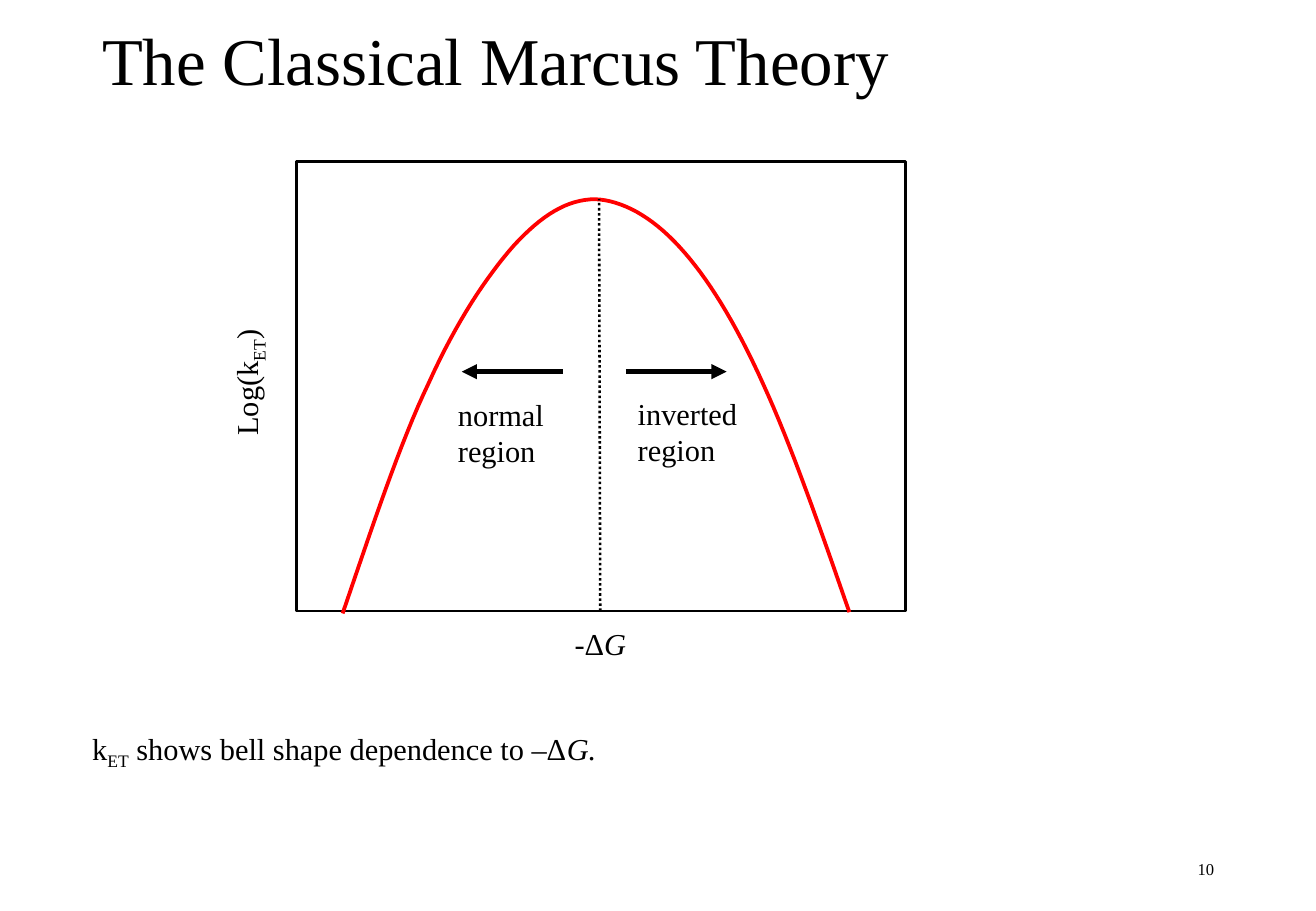
from lxml.etree import SubElement
from pptx import Presentation
from pptx.dml.color import RGBColor
from pptx.enum.dml import MSO_LINE
from pptx.enum.shapes import MSO_CONNECTOR, MSO_SHAPE
from pptx.enum.text import MSO_ANCHOR, MSO_AUTO_SIZE, PP_ALIGN
from pptx.oxml.ns import qn
from pptx.util import Inches, Pt

BLACK = RGBColor(0, 0, 0)
WHITE = RGBColor(255, 255, 255)
RED = RGBColor(255, 0, 0)
FONT = "Times New Roman"
BODY_SIZE = 18

# Content: each label has a box, a rotation and paragraphs of (text, style) runs
TITLE = "The Classical Marcus Theory"
PAGE_NUMBER = "10"
LABELS = [
    ((4.63, 5.1, 0.63, 0.4), 0, [[("-Δ", ""), ("G", "italic")]]),
    ((1.47, 2.93, 1.11, 0.4), 270, [[("Log(k", ""), ("ET", "sub"), (")", "")]]),
    ((3.67, 3.21, 0.92, 0.71), 0, [[("normal", "")], [("region", "")]]),
    ((5.15, 3.2, 1.03, 0.71), 0, [[("inverted", "")], [("region", "")]]),
    ((0.66, 5.96, 9.63, 0.4), 0,
     [[("k", ""), ("ET", "sub"), (" shows bell shape dependence to –Δ", ""),
       ("G.", "italic")]]),
]
PLOT_FRAME = (2.44, 1.33, 5.01, 3.7)
# Bell curve: start point, then two control points and an end point per segment
BELL_START = (2.82, 5.05)
BELL_SEGMENTS = [
    ((3.06, 4.35), (3.29, 3.65), (3.53, 3.15)),
    ((3.76, 2.64), (4.01, 2.27), (4.23, 2.02)),
    ((4.46, 1.77), (4.67, 1.64), (4.9, 1.64)),
    ((5.12, 1.65), (5.36, 1.78), (5.59, 2.03)),
    ((5.82, 2.28), (6.05, 2.65), (6.28, 3.16)),
    ((6.51, 3.66), (6.75, 4.35), (6.99, 5.04)),
]
STEPS = 16
PEAK_LINE = ((4.94, 5.03), (4.93, 1.64))
REGION_ARROWS = [((4.63, 3.06), (3.8, 3.06)), ((5.15, 3.06), (5.98, 3.06))]


def inches(values):
    return [Inches(value) for value in values]


def style_font(font, size):
    font.name = FONT
    font.size = Pt(size)
    font.color.rgb = BLACK


def add_label(slide, box, rotation, paragraphs, size=BODY_SIZE):
    label = slide.shapes.add_textbox(*inches(box))
    label.rotation = rotation
    frame = label.text_frame
    frame.word_wrap = False
    for index, runs in enumerate(paragraphs):
        paragraph = frame.add_paragraph() if index else frame.paragraphs[0]
        for text, style in runs:
            run = paragraph.add_run()
            run.text = text
            style_font(run.font, size)
            if style == "italic":
                run.font.italic = True
            elif style == "sub":
                run.font._element.set("baseline", "-25000")
    return frame


def add_line(slide, start, end, width):
    line = slide.shapes.add_connector(
        MSO_CONNECTOR.STRAIGHT, *inches(start), *inches(end))
    line.line.color.rgb = BLACK
    line.line.width = Pt(width)
    SubElement(line._element.spPr, qn("a:effectLst"))
    return line.line


def bezier_points(start, segments):
    points = []
    for first, second, end in segments:
        for step in range(1, STEPS + 1):
            t = step / STEPS
            u = 1 - t
            points.append(inches(
                u**3 * a + 3 * u**2 * t * b + 3 * u * t**2 * c + t**3 * d
                for a, b, c, d in zip(start, first, second, end)))
        start = end
    return points


def main():
    prs = Presentation()
    prs.slide_width, prs.slide_height = Inches(10.83), Inches(7.5)
    slide = prs.slides.add_slide(prs.slide_layouts[5])

    # Title
    title = slide.shapes.title
    title.left, title.top, title.width, title.height = inches((0.74, 0.21, 9.34, 0.67))
    title.text_frame.text = TITLE
    title.text_frame.auto_size = MSO_AUTO_SIZE.NONE
    title.text_frame.vertical_anchor = MSO_ANCHOR.MIDDLE
    heading = title.text_frame.paragraphs[0]
    heading.alignment = PP_ALIGN.LEFT
    heading.line_spacing = 0.8
    style_font(heading.runs[0].font, 39.6)

    # Plot frame
    plot = slide.shapes.add_shape(MSO_SHAPE.RECTANGLE, *inches(PLOT_FRAME))
    plot.shadow.inherit = False
    plot.fill.solid()
    plot.fill.fore_color.rgb = WHITE
    plot.line.color.rgb = BLACK
    plot.line.width = Pt(1.5)

    # Bell curve
    builder = slide.shapes.build_freeform(*inches(BELL_START))
    builder.add_line_segments(bezier_points(BELL_START, BELL_SEGMENTS), close=False)
    bell = builder.convert_to_shape()
    bell.shadow.inherit = False
    bell.fill.background()
    bell.line.color.rgb = RED
    bell.line.width = Pt(2.25)

    # Peak line and region arrows
    add_line(slide, *PEAK_LINE, 1.5).dash_style = MSO_LINE.ROUND_DOT
    for start, end in REGION_ARROWS:
        arrow = add_line(slide, start, end, 3)
        SubElement(arrow._get_or_add_ln(), qn("a:tailEnd"), type="triangle")

    # Labels and page number
    for box, rotation, paragraphs in LABELS:
        add_label(slide, box, rotation, paragraphs)
    footer = add_label(slide, (7.65, 6.95, 2.44, 0.4), 0, [[(PAGE_NUMBER, "")]], 9.8)
    footer.word_wrap = True
    footer.vertical_anchor = MSO_ANCHOR.MIDDLE
    footer.paragraphs[0].alignment = PP_ALIGN.RIGHT

    prs.save("out.pptx")


if __name__ == "__main__":
    main()
